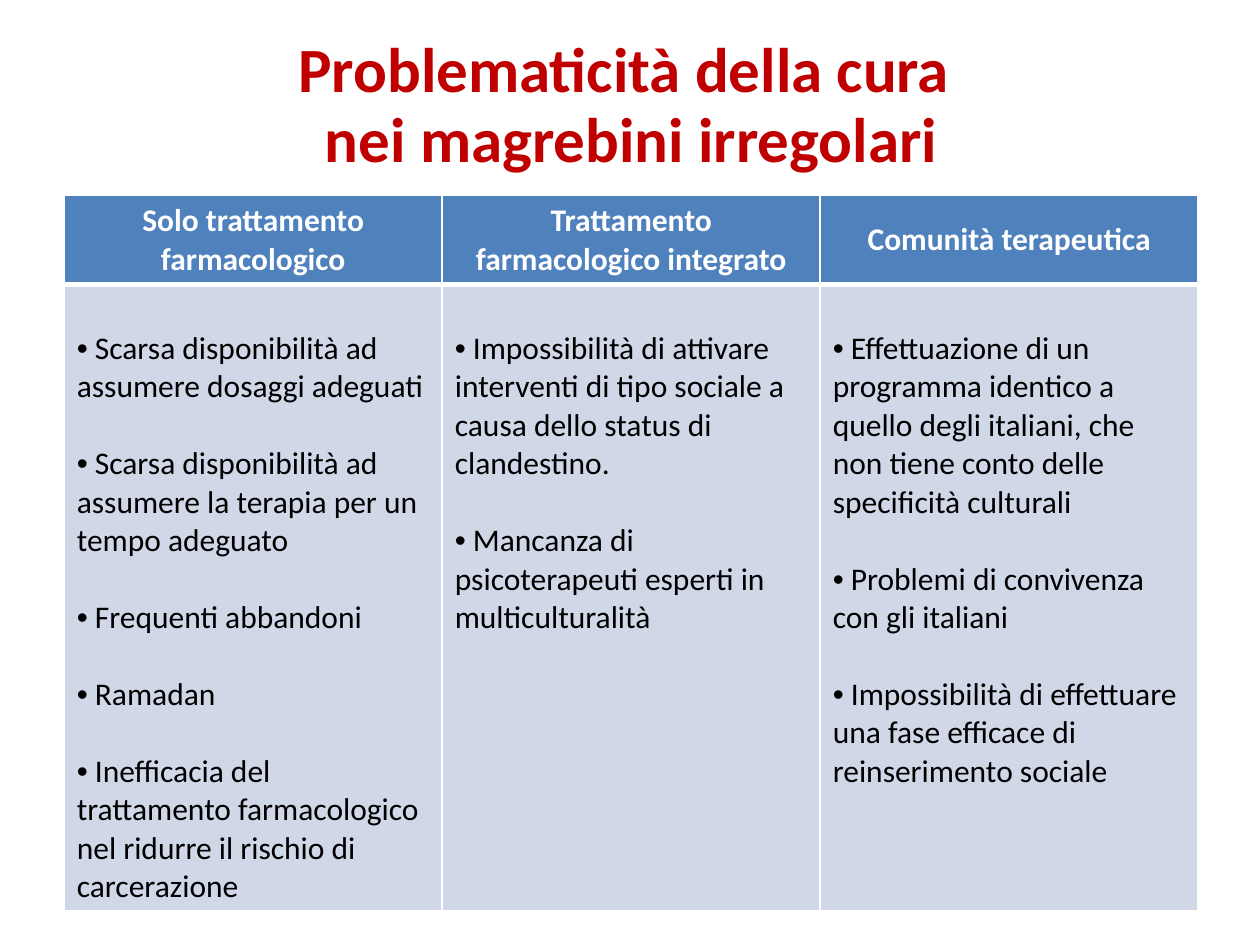
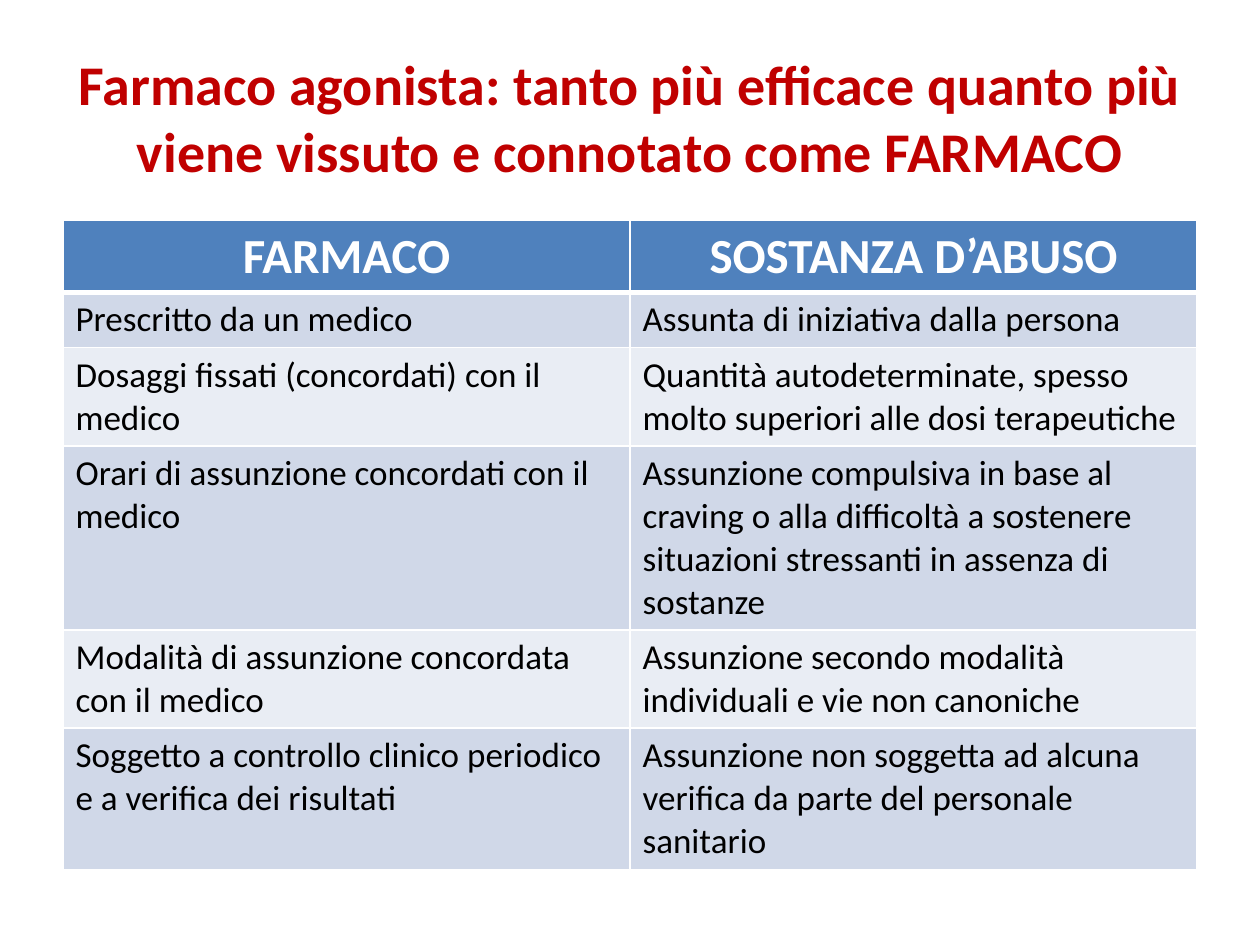
from dataclasses import dataclass
from lxml.etree import SubElement as Sub
from pptx import Presentation
from pptx.dml.color import RGBColor as Rgb
from pptx.enum.text import MSO_ANCHOR as Anchor, PP_ALIGN as Align
from pptx.oxml.ns import qn
from pptx.util import Inches, Pt


@dataclass(frozen=True)
class Theme:
    font: str = "Calibri"
    title: str = "C00000"
    head: str = "4F81BD"
    bands: tuple = ("D0D8E8", "E9EDF4")
    white: str = "FFFFFF"
    ink: str = "000000"
    big: int = 36
    mid: int = 32
    top: int = 28
    text: int = 20
    small: int = 18
    thin: int = 1
    thick: int = 3


class Deck:
    """Holds the style and the current slide; lengths are grid units."""
    COLS, ROWS = 100, 75

    def __init__(self, theme):
        self.theme = theme
        self.prs = Presentation()
        self.prs.slide_width, self.prs.slide_height = Inches(10), Inches(7.5)
        self.col = self.prs.slide_width / self.COLS
        self.row = self.prs.slide_height / self.ROWS

    def page(self):
        self.slide = self.prs.slides.add_slide(self.prs.slide_layouts[6])

    def box(self, x, y, w, h):
        return (round(x * self.col), round(y * self.row),
                round(w * self.col), round(h * self.row))

    def style(self, para, size, color, bold=False, align=Align.LEFT):
        para.alignment = align
        font = para.font
        font.name, font.size, font.bold = self.theme.font, Pt(size), bold
        font.color.rgb = Rgb.from_string(color)

    def title(self, text, x, y, size, lead=None):
        frame = self.slide.shapes.add_textbox(*self.box(x, y, 90, 12.5)).text_frame
        frame.word_wrap = True
        frame.vertical_anchor = Anchor.MIDDLE
        para = frame.paragraphs[0]
        para.text = text
        self.style(para, size, self.theme.title, True, Align.CENTER)
        if lead:
            para.line_spacing = Pt(lead)

    def edges(self, cell, top, bottom):
        props = cell._tc.get_or_add_tcPr()
        thin = self.theme.thin
        for side, width in zip("LRTB", (thin, thin, top, bottom)):
            line = Sub(props, qn(f"a:ln{side}"), w=str(Pt(width)))
            Sub(Sub(line, qn("a:solidFill")), qn("a:srgbClr"), val=self.theme.white)

    def table(self, x, y, wide, highs, rows, head, body):
        """Draw rows of text; a list in a cell becomes bullets."""
        th = self.theme
        count = len(rows[0])
        grid = self.slide.shapes.add_table(
            len(rows), count, *self.box(x, y, wide, sum(highs))).table
        for col in grid.columns:
            col.width = round(wide / count * self.col)
        for r, (high, row) in enumerate(zip(highs, rows)):
            grid.rows[r].height = round(high * self.row)
            for c, text in enumerate(row):
                cell = grid.cell(r, c)
                self.edges(cell, th.thick if r == 1 else th.thin,
                           th.thick if r == 0 else th.thin)
                cell.fill.solid()
                fill = th.bands[(r - 1) % 2] if r else th.head
                cell.fill.fore_color.rgb = Rgb.from_string(fill)
                if isinstance(text, list):
                    self.bullets(cell, text, body)
                    continue
                para = cell.text_frame.paragraphs[0]
                para.text = text
                if r:
                    self.style(para, body, th.ink)
                else:
                    cell.vertical_anchor = Anchor.MIDDLE
                    self.style(para, head, th.white, True, Align.CENTER)

    def bullets(self, cell, items, size):
        line = Pt(size * 1.22)
        cell.margin_top = Inches(0.05) + line
        frame = cell.text_frame
        for i, item in enumerate(items):
            para = frame.add_paragraph() if i else frame.paragraphs[0]
            para.text = f" {item}"
            props = para._p.get_or_add_pPr()
            Sub(props, qn("a:buFont"), typeface="Arial")
            Sub(props, qn("a:buChar"), char="•")
            if i:
                para.space_before = line
            self.style(para, size, self.theme.ink)


def main():
    th = Theme()
    deck = Deck(th)

    # Problems of each kind of care
    deck.page()
    deck.title("Problematicità della cura \vnei magrebini irregolari",
               5.1, 2.1, th.big, lead=40)
    care = [
        ["Solo trattamento farmacologico",
         "Trattamento farmacologico integrato",
         "Comunità terapeutica"],
        [["Scarsa disponibilità ad assumere dosaggi adeguati",
          "Scarsa disponibilità ad assumere la terapia per un tempo adeguato",
          "Frequenti abbandoni",
          "Ramadan",
          "Inefficacia del trattamento farmacologico nel ridurre il rischio "
          "di carcerazione"],
         ["Impossibilità di attivare interventi di tipo sociale a causa dello "
          "status di clandestino.",
          "Mancanza di psicoterapeuti esperti in multiculturalità"],
         ["Effettuazione di un programma identico a quello degli italiani, che "
          "non tiene conto delle specificità culturali",
          "Problemi di convivenza con gli italiani",
          "Impossibilità di effettuare una fase efficace di reinserimento "
          "sociale"]],
    ]
    deck.table(5.1, 15.5, 90, (7.1, 49.7), care, th.small, th.small)

    # Medicine against abused substance
    deck.page()
    deck.title("Farmaco agonista: tanto più efficace quanto più viene vissuto "
               "e connotato come FARMACO", 5, 3, th.mid)
    pairs = [
        ("FARMACO", "SOSTANZA D’ABUSO"),
        ("Prescritto da un medico", "Assunta di iniziativa dalla persona"),
        ("Dosaggi fissati (concordati) con il medico",
         "Quantità autodeterminate, spesso molto superiori alle dosi "
         "terapeutiche"),
        ("Orari di assunzione concordati con il medico",
         "Assunzione compulsiva in base al craving o alla difficoltà a "
         "sostenere situazioni stressanti in assenza di sostanze"),
        ("Modalità di assunzione concordata con il medico",
         "Assunzione secondo modalità individuali e vie non canoniche"),
        ("Soggetto a controllo clinico periodico e a verifica dei risultati",
         "Assunzione non soggetta ad alcuna verifica da parte del personale "
         "sanitario"),
    ]
    deck.table(5, 17.5, 90, (5.7, 4.4, 7.8, 14.6, 7.8, 11.2), pairs,
               th.top, th.text)

    deck.prs.save("out.pptx")


if __name__ == "__main__":
    main()
